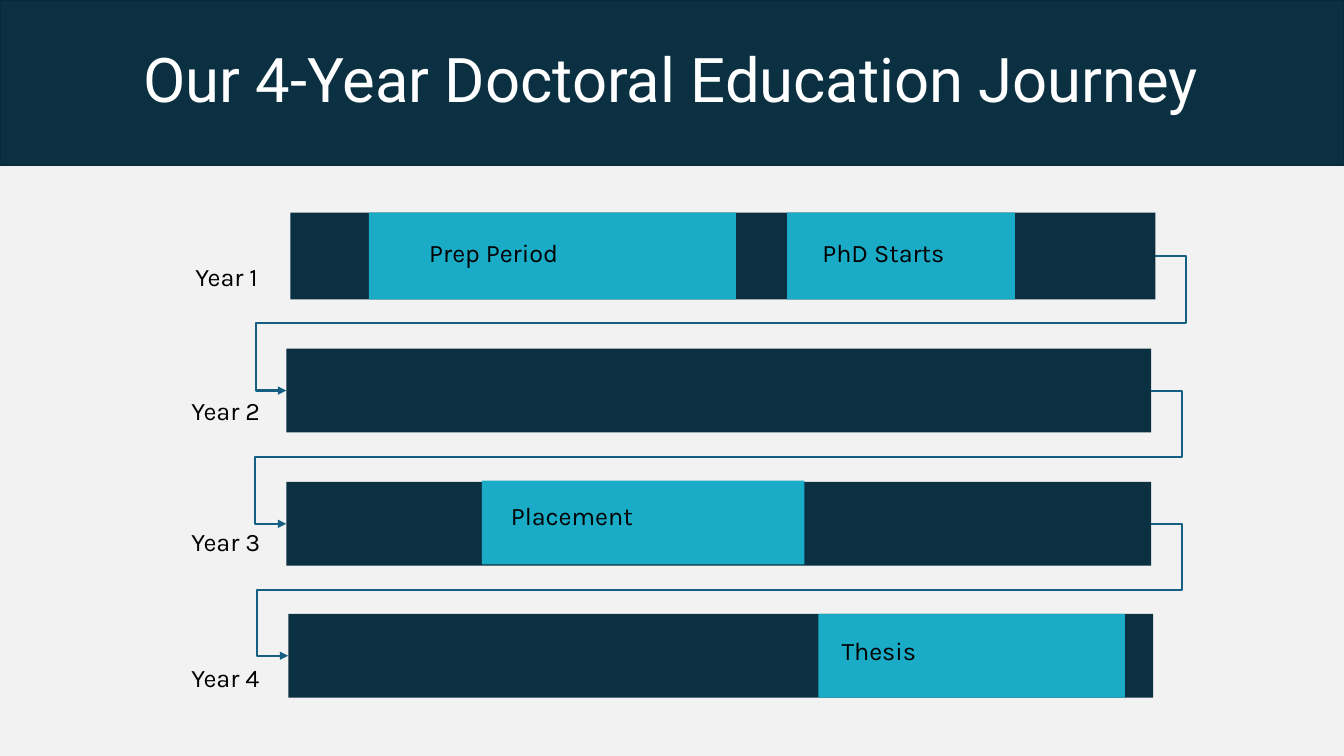
from pptx import Presentation
from pptx.dml.color import RGBColor
from pptx.enum.shapes import MSO_CONNECTOR as Connector, MSO_SHAPE as Shape
from pptx.enum.text import MSO_ANCHOR as Anchor, MSO_AUTO_SIZE as AutoSize, PP_ALIGN as Align
from pptx.oxml.ns import qn
from pptx.util import Pt
from lxml.etree import SubElement

TITLE = "Our 4-Year Doctoral Education Journey"
# Bar left, top and height; year label left and top
YEARS = [
    ("Year 1", 207.4, 151.9, 62, 132.5, 182.9),
    ("Year 2", 204.5, 249.1, 59.8, 129.6, 278.6),
    ("Year 3", 204.5, 344.2, 59.8, 129.6, 372.2),
    ("Year 4", 205.9, 438.5, 59.8, 129.6, 469.4),
]
# Block left, top, width and height; label left and top
PHASES = [
    ("Prep Period", 263.5, 151.9, 262.1, 62, 299.5, 166.3),
    ("PhD Starts", 562.3, 151.9, 162.7, 62, 580.3, 166.3),
    ("Placement", 344.2, 343.4, 230.4, 59.8, 357.8, 354.2),
    ("Thesis", 584.6, 438.5, 218.9, 59.8, 594, 450),
]
SLIDE_WIDTH, SLIDE_HEIGHT = 960, 540
BANNER_HEIGHT = 118.1
BAR_WIDTH = 617.8
LABEL_WIDTH, LABEL_HEIGHT = 190.8, 36
OVERHANG = 22
NAVY, NAVY_EDGE, TEAL, BLUE = "0B3041", "092A39", "1AABC7", "156082"
BLACK, WHITE, PAPER = "000000", "FFFFFF", "F2F2F2"
LEFT_SITE, RIGHT_SITE = 1, 3

presentation = Presentation()
presentation.slide_width, presentation.slide_height = Pt(SLIDE_WIDTH), Pt(SLIDE_HEIGHT)
slide = presentation.slides.add_slide(presentation.slide_layouts[6])


def apply(target, values):
    for name, value in values.items():
        setattr(target, name, value)


def paint(fill, color):
    fill.solid()
    fill.fore_color.rgb = RGBColor.from_string(color)


def add_block(left, top, width, height, color, edge=None):
    block = slide.shapes.add_shape(Shape.RECTANGLE, Pt(left), Pt(top), Pt(width), Pt(height))
    block.shadow.inherit = False
    paint(block.fill, color)
    if edge:
        paint(block.line.fill, edge)
        block.line.width = Pt(1.5)
    else:
        block.line.fill.background()
    return block


def add_text(text, left, top, width, height, color, font, frame_format, paragraph_format):
    frame = slide.shapes.add_textbox(Pt(left), Pt(top), Pt(width), Pt(height)).text_frame
    apply(frame, {"word_wrap": True, **frame_format})
    paragraph = frame.paragraphs[0]
    apply(paragraph, paragraph_format)
    run = paragraph.add_run()
    run.text = text
    apply(run.font, font)
    paint(run.font.fill, color)


def add_label(text, left, top):
    add_text(text, left, top, LABEL_WIDTH, LABEL_HEIGHT, BLACK,
             {"name": "Karla", "size": Pt(18)},
             {"auto_size": AutoSize.SHAPE_TO_FIT_TEXT}, {})


def link_years(bar, next_bar):
    """Wrap an arrow from the right end of one bar to the left end of the next."""
    connector = slide.shapes.add_connector(Connector.ELBOW, 0, 0, 0, 0)
    connector.begin_connect(bar, RIGHT_SITE)
    connector.end_connect(next_bar, LEFT_SITE)
    paint(connector.line.fill, BLUE)
    connector.line.width = Pt(1.5)

    properties = connector._element.spPr
    geometry = properties.find(qn("a:prstGeom"))
    geometry.set("prst", "bentConnector5")
    guides = geometry.find(qn("a:avLst"))
    if guides is None:
        guides = SubElement(geometry, qn("a:avLst"))
    reach = round(Pt(OVERHANG) / connector.width * 100000)
    for number, value in enumerate((-reach, 50000, 100000 + reach), start=1):
        SubElement(guides, qn("a:gd"), name=f"adj{number}", fmla=f"val {value}")
    SubElement(properties.find(qn("a:ln")), qn("a:tailEnd"), type="triangle")
    SubElement(properties, qn("a:effectLst"))


paint(slide.background.fill, PAPER)
add_block(0, 0, SLIDE_WIDTH, BANNER_HEIGHT, NAVY, NAVY_EDGE)
add_text(TITLE, 66, 6.5, 827.5, 104.4, WHITE,
         {"name": "Roboto", "size": Pt(44)},
         {"vertical_anchor": Anchor.MIDDLE},
         {"alignment": Align.CENTER, "line_spacing": 0.9})

bars = []
for year, left, top, height, label_left, label_top in YEARS:
    bars.append(add_block(left, top, BAR_WIDTH, height, NAVY))
    add_label(year, label_left, label_top)

for bar, next_bar in zip(bars, bars[1:]):
    link_years(bar, next_bar)

for phase, left, top, width, height, label_left, label_top in PHASES:
    add_block(left, top, width, height, TEAL)
    add_label(phase, label_left, label_top)

presentation.save("out.pptx")
